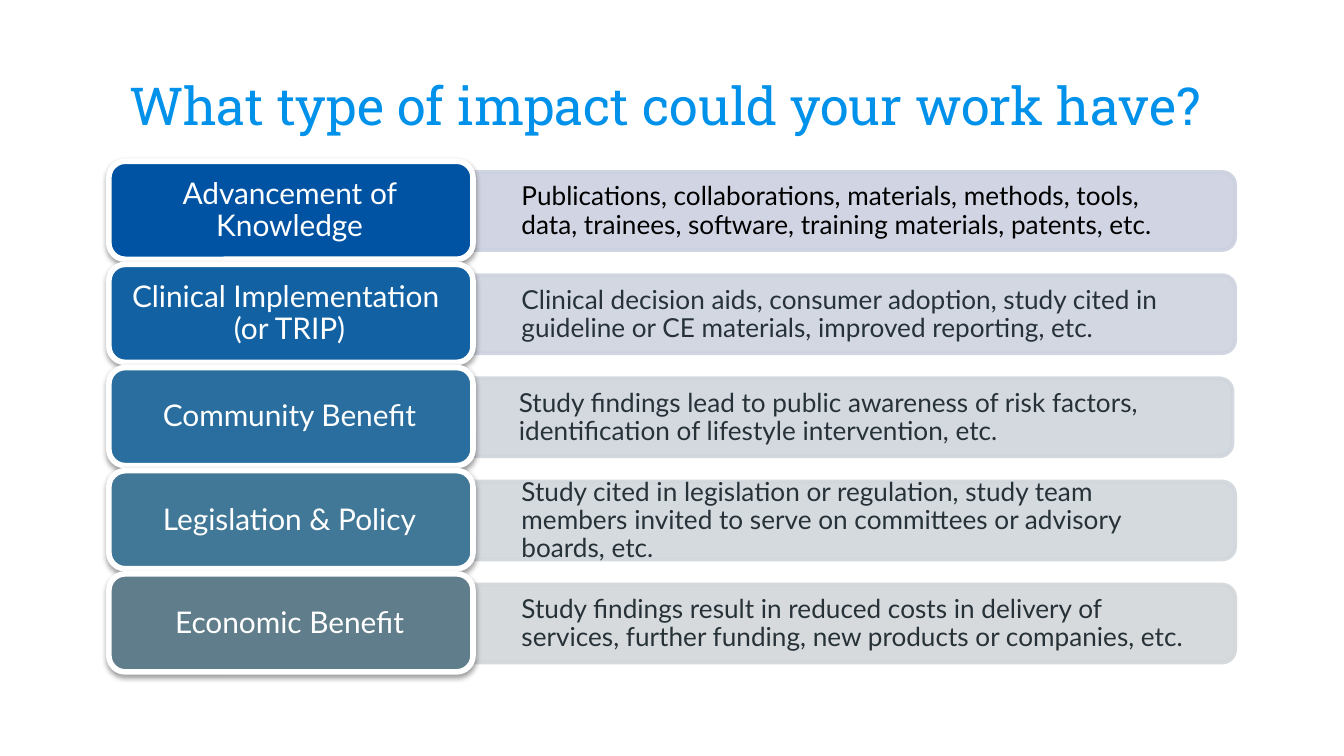
from lxml import etree
from pptx import Presentation
from pptx.dml.color import RGBColor
from pptx.enum.shapes import MSO_SHAPE
from pptx.enum.text import MSO_ANCHOR, MSO_AUTO_SIZE, PP_ALIGN
from pptx.oxml import parse_xml
from pptx.oxml.ns import nsdecls, qn
from pptx.util import Inches, Pt

IMPACTS = [
    ("Advancement of Knowledge", "0053A3", "CCD1E0", "000000", 0,
     "Publications, collaborations, materials, methods, tools, data, trainees, "
     "software, training materials, patents, etc."),
    ("Clinical Implementation \v(or TRIP)", "1262A3", "CED3DF", "263238", 0,
     "Clinical decision aids, consumer adoption, study cited in guideline or CE "
     "materials, improved reporting, etc."),
    ("Community Benefit", "296E9E", "D0D5DD", "263238", -0.02,
     "Study findings lead to public awareness of risk factors, identification of "
     "lifestyle intervention, etc."),
    ("Legislation & Policy", "427897", "D1D7DC", "263238", 0,
     "Study cited in legislation or regulation, study team members invited to serve "
     "on committees or advisory boards, etc."),
    ("Economic Benefit", "607D8B", "D3D7DA", "263238", 0,
     "Study findings result in reduced costs in delivery of services, further "
     "funding, new products or companies, etc."),
]
LEFT, TOP, BOTTOM = 0.81, 1.2, 5.0
LABEL_WIDTH, LABEL_HEIGHT = 2.71, 0.73
PITCH = (BOTTOM - TOP - LABEL_HEIGHT) / (len(IMPACTS) - 1)


def rgb(value):
    return RGBColor.from_string(value)


def write(shape, text, font, size, color, anchor, insets, align=PP_ALIGN.LEFT):
    frame = shape.text_frame
    frame.text = text
    frame.word_wrap = True
    frame.auto_size = MSO_AUTO_SIZE.NONE
    frame.vertical_anchor = anchor
    frame.margin_left = frame.margin_right = Inches(insets[0])
    frame.margin_top = frame.margin_bottom = Inches(insets[1])
    paragraph = frame.paragraphs[0]
    paragraph.alignment = align
    for run in paragraph.runs:
        run.font.name = font
        run.font.size = Pt(size)
        run.font.color.rgb = rgb(color)
    return paragraph


def add_panel(slide, preset, left, top, width, height, fill, line, weight):
    panel = slide.shapes.add_shape(
        preset, Inches(left), Inches(top), Inches(width), Inches(height))
    panel.shadow.inherit = False
    panel.fill.solid()
    panel.fill.fore_color.rgb = rgb(fill)
    panel.line.color.rgb = rgb(line)
    panel.line.width = Pt(weight)
    return panel


def add_title(slide, left, top, width, height):
    title = slide.shapes.title
    title.left, title.top = Inches(left), Inches(top)
    title.width, title.height = Inches(width), Inches(height)
    write(title, "What type of impact could your work have?", "Roboto Slab", 28,
          "0091EA", MSO_ANCHOR.BOTTOM, (0.1, 0.1))


def add_detail(slide, left, top, width, height, tint, color, text):
    bar = add_panel(slide, MSO_SHAPE.ROUND_2_SAME_RECTANGLE,
                    left + (width - height) / 2, top + (height - width) / 2,
                    height, width, tint, tint, 2)
    bar.rotation = 90
    for solid_color in bar._element.spPr.iter(qn("a:srgbClr")):
        etree.SubElement(solid_color, qn("a:alpha"), val="90000")

    detail = slide.shapes.add_textbox(
        Inches(left), Inches(top + 0.03), Inches(width - 0.03), Inches(height - 0.05))
    paragraph = write(detail, text, "Lato", 14, color, MSO_ANCHOR.MIDDLE, (0.27, 0.14))
    paragraph.level = 1
    paragraph.line_spacing = 0.9
    properties = paragraph._p.get_or_add_pPr()
    properties.set("marL", str(Inches(0.1)))
    properties.set("indent", "0")


def add_label(slide, left, top, width, height, fill, text):
    panel = add_panel(slide, MSO_SHAPE.ROUNDED_RECTANGLE, left, top, width, height,
                      fill, "FFFFFF", 3)
    panel._element.spPr.find(qn("a:effectLst")).append(parse_xml(
        f'<a:outerShdw {nsdecls("a")} blurRad="{Pt(3.1)}" dist="{Pt(1.6)}" '
        'dir="5400000" rotWithShape="0"><a:srgbClr val="000000">'
        '<a:alpha val="38000"/></a:srgbClr></a:outerShdw>'))
    label = slide.shapes.add_textbox(
        Inches(left + 0.03), Inches(top + 0.04), Inches(width - 0.08),
        Inches(height - 0.07))
    paragraph = write(label, text, "Lato", 16, "FFFFFF", MSO_ANCHOR.MIDDLE,
                      (0.07, 0.03), PP_ALIGN.CENTER)
    paragraph.line_spacing = 0.9


def add_impact(slide, left, top, impact):
    name, fill, tint, color, shift, examples = impact
    add_detail(slide, left + LABEL_WIDTH - 0.01 + shift, top + 0.08, 5.68, 0.58,
               tint, color, examples)
    add_label(slide, left, top, LABEL_WIDTH, LABEL_HEIGHT, fill, name)


def main():
    presentation = Presentation()
    presentation.slide_width = Inches(10)
    presentation.slide_height = presentation.slide_width * 9 // 16
    slide = presentation.slides.add_slide(presentation.slide_layouts[5])
    add_title(slide, 0.86, 0.34, 8.28, 0.77)
    for row, impact in enumerate(IMPACTS):
        add_impact(slide, LEFT, TOP + row * PITCH, impact)
    presentation.save("out.pptx")


if __name__ == "__main__":
    main()
